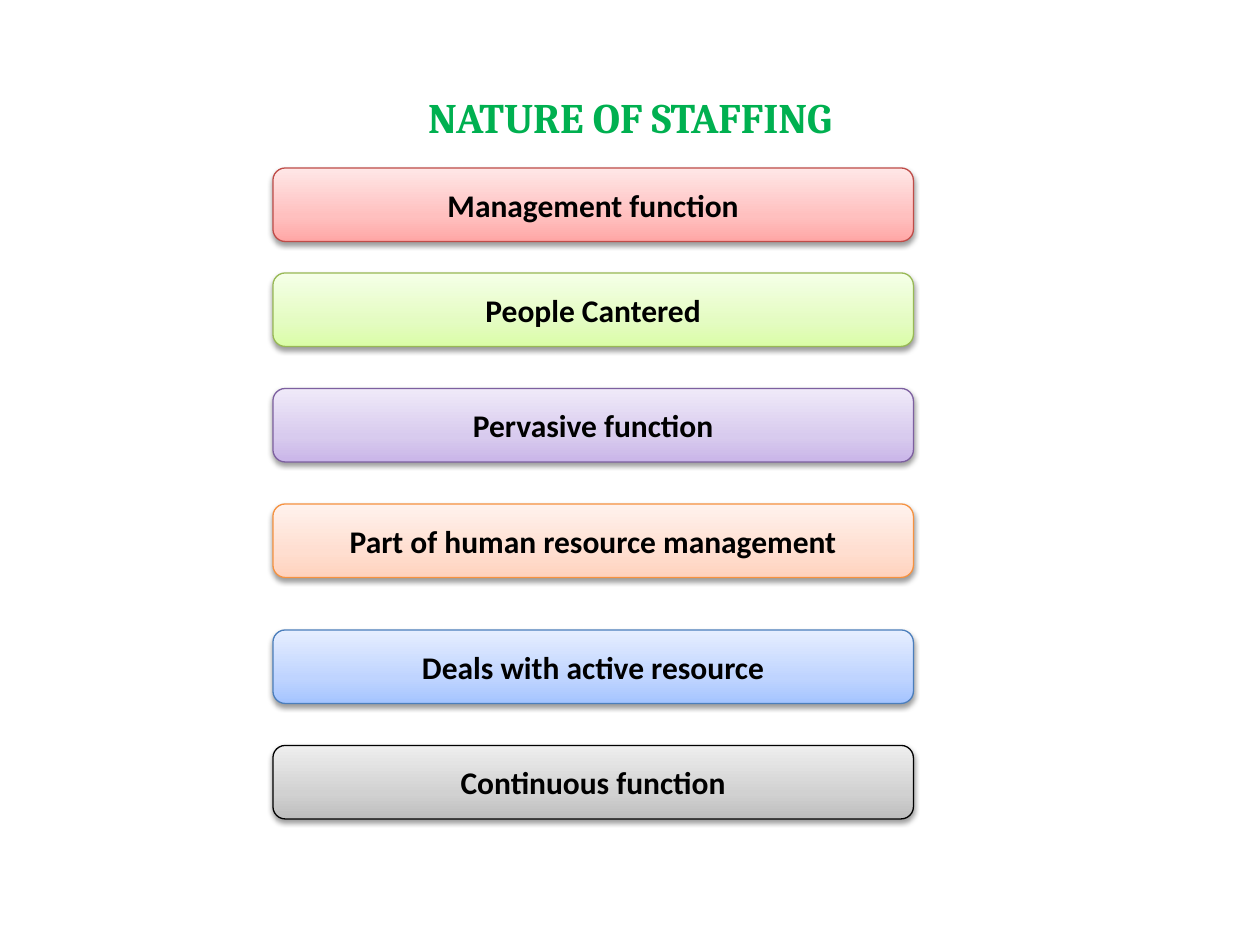
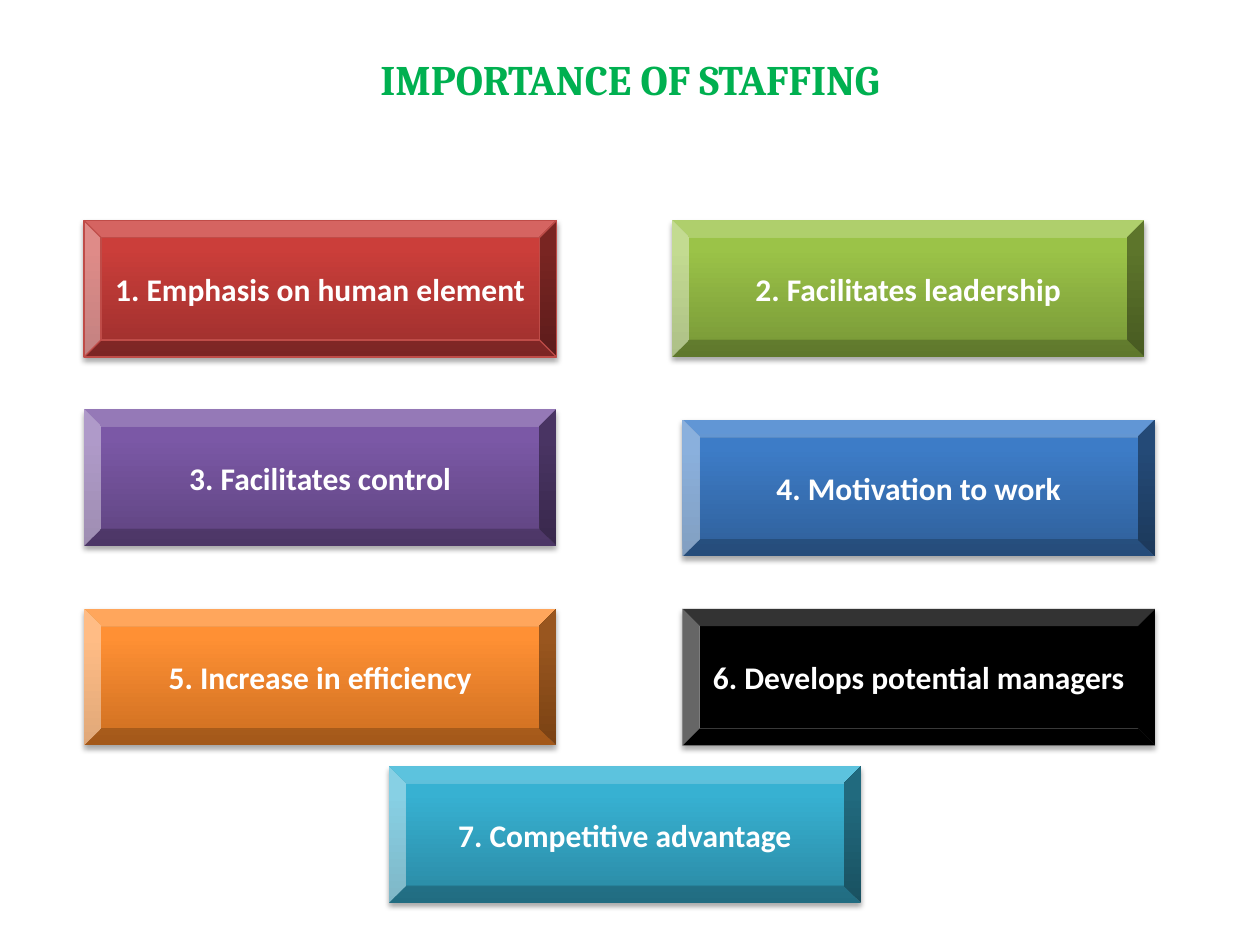
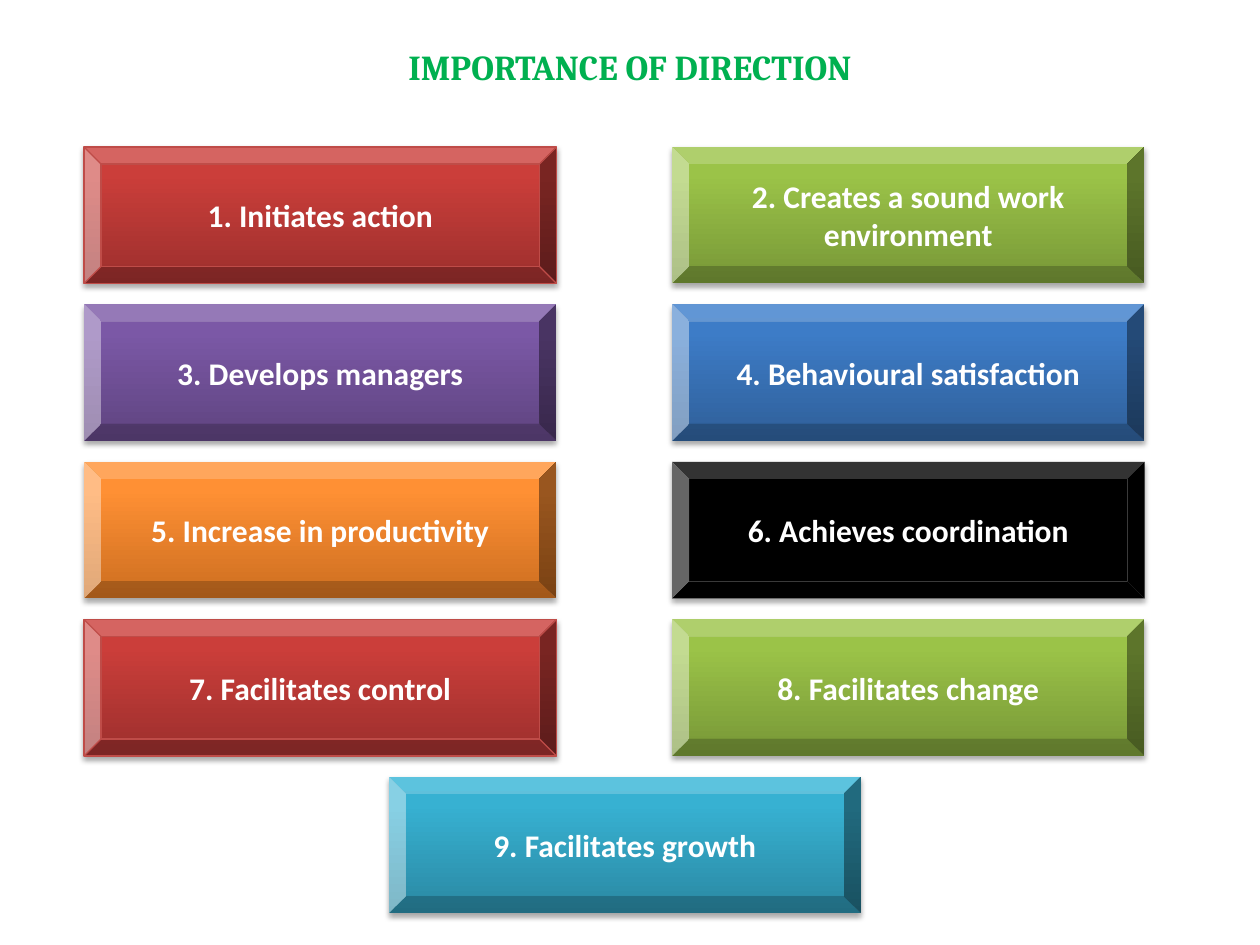
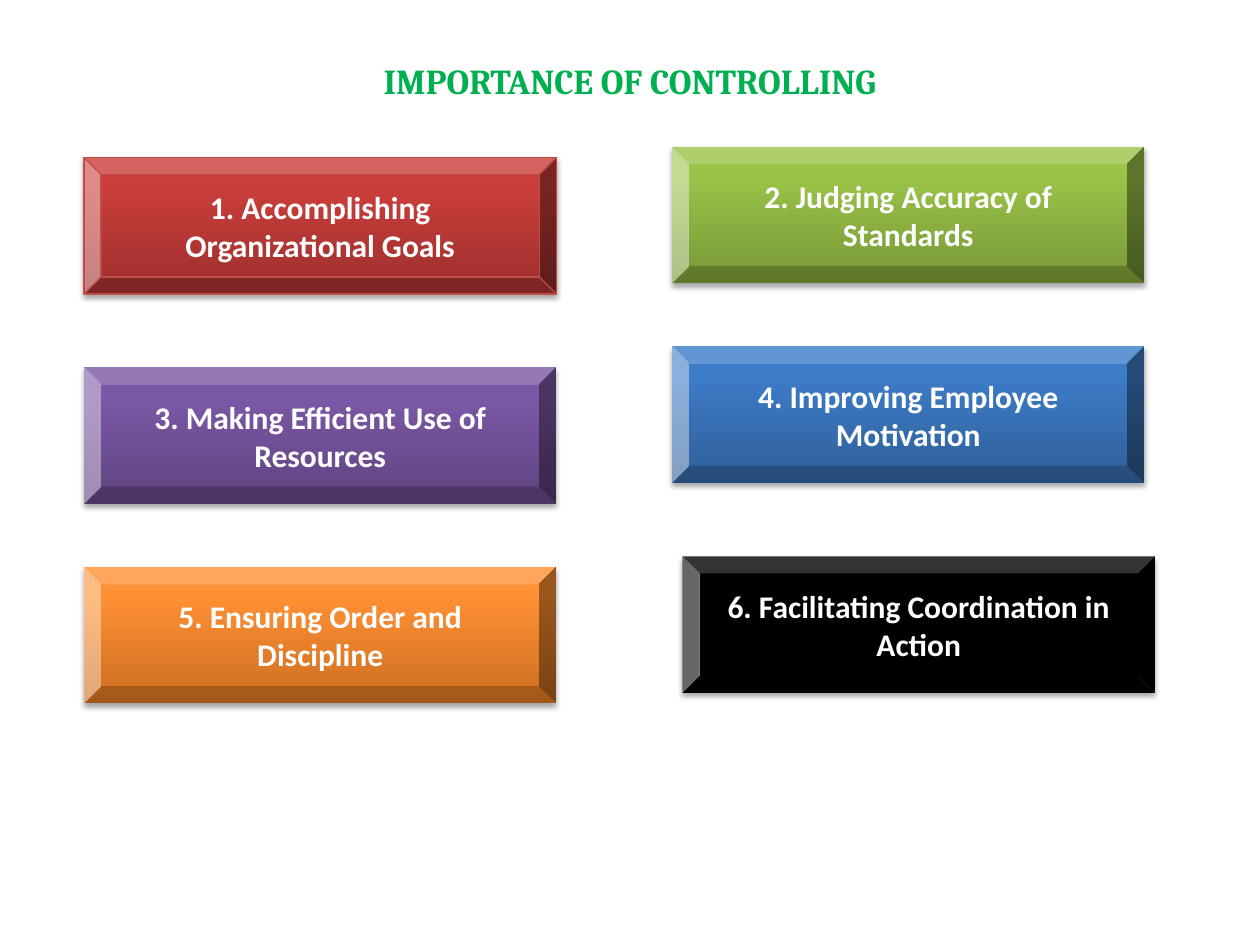
from dataclasses import dataclass
from itertools import cycle

from lxml.etree import SubElement
from pptx import Presentation
from pptx.dml.color import RGBColor
from pptx.enum.shapes import MSO_SHAPE
from pptx.enum.text import MSO_ANCHOR, PP_ALIGN
from pptx.oxml.ns import qn
from pptx.util import Inches, Pt

COLUMNS, ROWS = 120, 90  # grid cells across and down each slide


@dataclass(frozen=True)
class Paint:
    """Gradient stops from bottom to top (one colour means solid) and an edge."""
    stops: tuple
    edge: str = ""


@dataclass(frozen=True)
class Finish:
    """What all blocks of one kind share."""
    outline: MSO_SHAPE
    middle_stop: int
    ink: str
    shadow_opacity: int
    shadow_distance: float


class Theme:
    title_font, body_font = "Cambria", "Calibri"
    title_large, title_small, label_size = 24, 20, 18
    title_ink = "00B050"
    edge_width, shadow_blur = 0.75, 3.15
    shadow = "000000"

    soft = Finish(MSO_SHAPE.ROUNDED_RECTANGLE, 35, "000000", 38, 1.57)
    raised = Finish(MSO_SHAPE.BEVEL, 80, "FFFFFF", 35, 1.81)

    soft_paints = (
        Paint(("FFA6A5", "FFC0BF", "FFE7E7"), "BF4C48"),
        Paint(("DAFDA7", "E4FCC2", "F5FFE7"), "98B955"),
        Paint(("C9B5E8", "D8CBEE", "F0EAF9"), "7D60A0"),
        Paint(("FFD2BD", "FFDED0", "FFF2ED"), "F69240"),
        Paint(("A4C4FF", "BFD4FF", "E6EEFF"), "4B7EBC"),
        Paint(("BDBDBD", "D1D1D1", "EEEEEE"), "000000"),
    )
    raised_paints = (
        Paint(("9C2F2D", "CB3E3A", "CE3B37"), "BF4C48"),
        Paint(("779737", "9BC348", "9DC746")),
        Paint(("5F4480", "7B58A6", "7C57A8")),
        Paint(("2F5F99", "3D7CC7", "3A7CCB")),
        Paint(("CC6E20", "FF9034", "FF9136")),
        Paint(("000000",)),
    )
    closing_paint = Paint(("2A88A2", "37B1D2", "34B4D6"))


@dataclass(frozen=True)
class Box:
    """An area in grid cells."""
    left: float
    top: float
    width: float
    height: float

    def inner(self, left, top, width, height):
        return Box(self.left + left, self.top + top, width, height)

    def emu(self, slide_width, slide_height):
        across, down = slide_width / COLUMNS, slide_height / ROWS
        return (round(self.left * across), round(self.top * down),
                round(self.width * across), round(self.height * down))


SLIDE_WIDTH, SLIDE_HEIGHT = Inches(10), Inches(7.5)
PAGE = Box(0, 0, COLUMNS, ROWS)
BLOCK_WIDTH, BLOCK_HEIGHT = 45, 13
LEFT, RIGHT, RIGHT_OUTER = 8, 64, 65
CLOSING_LEFT = 37


def write(frame, text, font, size, ink):
    frame.word_wrap = True
    frame.vertical_anchor = MSO_ANCHOR.MIDDLE
    paragraph = frame.paragraphs[0]
    paragraph.alignment = PP_ALIGN.CENTER
    run = paragraph.add_run()
    run.text = text
    run.font.name, run.font.size, run.font.bold = font, Pt(size), True
    run.font.color.rgb = RGBColor.from_string(ink)


def add_title(slide, box, text, size):
    title = slide.shapes.add_textbox(*box.emu(SLIDE_WIDTH, SLIDE_HEIGHT))
    write(title.text_frame, text, Theme.title_font, size, Theme.title_ink)


def paint_fill(block, stops, middle_stop):
    if len(stops) == 1:
        block.fill.solid()
        block.fill.fore_color.rgb = RGBColor.from_string(stops[0])
        return
    block.fill.gradient()
    block.fill.gradient_angle = 90
    stop_list = block._element.spPr.find(qn("a:gradFill")).find(qn("a:gsLst"))
    for default_stop in list(stop_list):
        stop_list.remove(default_stop)
    for percent, colour in zip((0, middle_stop, 100), stops):
        stop = SubElement(stop_list, qn("a:gs"), pos=str(percent * 1000))
        SubElement(stop, qn("a:srgbClr"), val=colour)


def cast_shadow(block, finish):
    block.shadow.inherit = False
    effects = block._element.spPr.find(qn("a:effectLst"))
    shadow = SubElement(effects, qn("a:outerShdw"), blurRad=str(Pt(Theme.shadow_blur)),
                        dist=str(Pt(finish.shadow_distance)), dir="5400000",
                        rotWithShape="0")
    colour = SubElement(shadow, qn("a:srgbClr"), val=Theme.shadow)
    SubElement(colour, qn("a:alpha"), val=str(finish.shadow_opacity * 1000))


def add_block(slide, box, text, paint, finish):
    block = slide.shapes.add_shape(finish.outline, *box.emu(SLIDE_WIDTH, SLIDE_HEIGHT))
    paint_fill(block, paint.stops, finish.middle_stop)
    if paint.edge:
        block.line.color.rgb = RGBColor.from_string(paint.edge)
        block.line.width = Pt(Theme.edge_width)
    else:
        block.line.fill.background()
    cast_shadow(block, finish)
    write(block.text_frame, text, Theme.body_font, Theme.label_size, finish.ink)


def add_stack(slide, box, labels, tops):
    """One column of soft blocks as wide as the box."""
    for label, top, paint in zip(labels, tops, Theme.soft_paints):
        add_block(slide, box.inner(0, top, box.width, 7), label, paint, Theme.soft)


def add_numbered_blocks(slide, box, labels, places, closing_top=None):
    """Raised blocks at their places; a closing one, if any, stands below."""
    spots = list(zip(places, cycle(Theme.raised_paints)))
    if closing_top is not None:
        spots.append(((CLOSING_LEFT, closing_top), Theme.closing_paint))
    for number, (label, ((left, top), paint)) in enumerate(zip(labels, spots), 1):
        area = box.inner(left, top, BLOCK_WIDTH, BLOCK_HEIGHT)
        add_block(slide, area, f"{number}. {label}", paint, Theme.raised)


def main():
    deck = Presentation()
    deck.slide_width, deck.slide_height = SLIDE_WIDTH, SLIDE_HEIGHT

    def titled_slide(title, top, height, size):
        slide = deck.slides.add_slide(deck.slide_layouts[6])
        add_title(slide, PAGE.inner(6, top, 108, height), title, size)
        return slide

    nature = titled_slide("NATURE OF STAFFING", 3.6, 15, Theme.title_large)
    add_stack(nature, PAGE.inner(26, 16, 61, 62),
              ("Management function", "People Cantered", "Pervasive function",
               "Part of human resource management", "Deals with active resource",
               "Continuous function"),
              (0, 10, 21, 32, 44, 55))

    staffing = titled_slide("IMPORTANCE OF STAFFING", 4, 7, Theme.title_large)
    add_numbered_blocks(
        staffing, PAGE,
        ("Emphasis on human element", "Facilitates leadership", "Facilitates control",
         "Motivation to work", "Increase in efficiency", "Develops potential managers",
         "Competitive advantage"),
        ((LEFT, 21), (RIGHT, 21), (LEFT, 39), (RIGHT_OUTER, 40),
         (LEFT, 58), (RIGHT_OUTER, 58)),
        closing_top=73)

    direction = titled_slide("IMPORTANCE OF DIRECTION", 3.6, 5.4, Theme.title_small)
    first_row, pitch = 14, BLOCK_HEIGHT + 2
    add_numbered_blocks(
        direction, PAGE,
        ("Initiates action", "Creates a sound work environment", "Develops managers",
         "Behavioural satisfaction", "Increase in productivity", "Achieves coordination",
         "Facilitates control", "Facilitates change", "Facilitates growth"),
        [(left, first_row + row * pitch) for row in range(4) for left in (LEFT, RIGHT)],
        closing_top=first_row + 4 * pitch)

    controlling = titled_slide("IMPORTANCE OF CONTROLLING", 5, 5.4, Theme.title_small)
    add_numbered_blocks(
        controlling, PAGE,
        ("Accomplishing Organizational Goals", "Judging Accuracy of Standards",
         "Making Efficient Use of Resources", "Improving Employee Motivation",
         "Ensuring Order and Discipline", "Facilitating Coordination in Action"),
        ((LEFT, 15), (RIGHT, 14), (LEFT, 35), (RIGHT, 33),
         (LEFT, 54), (RIGHT_OUTER, 53)))

    deck.save("out.pptx")


if __name__ == "__main__":
    main()
